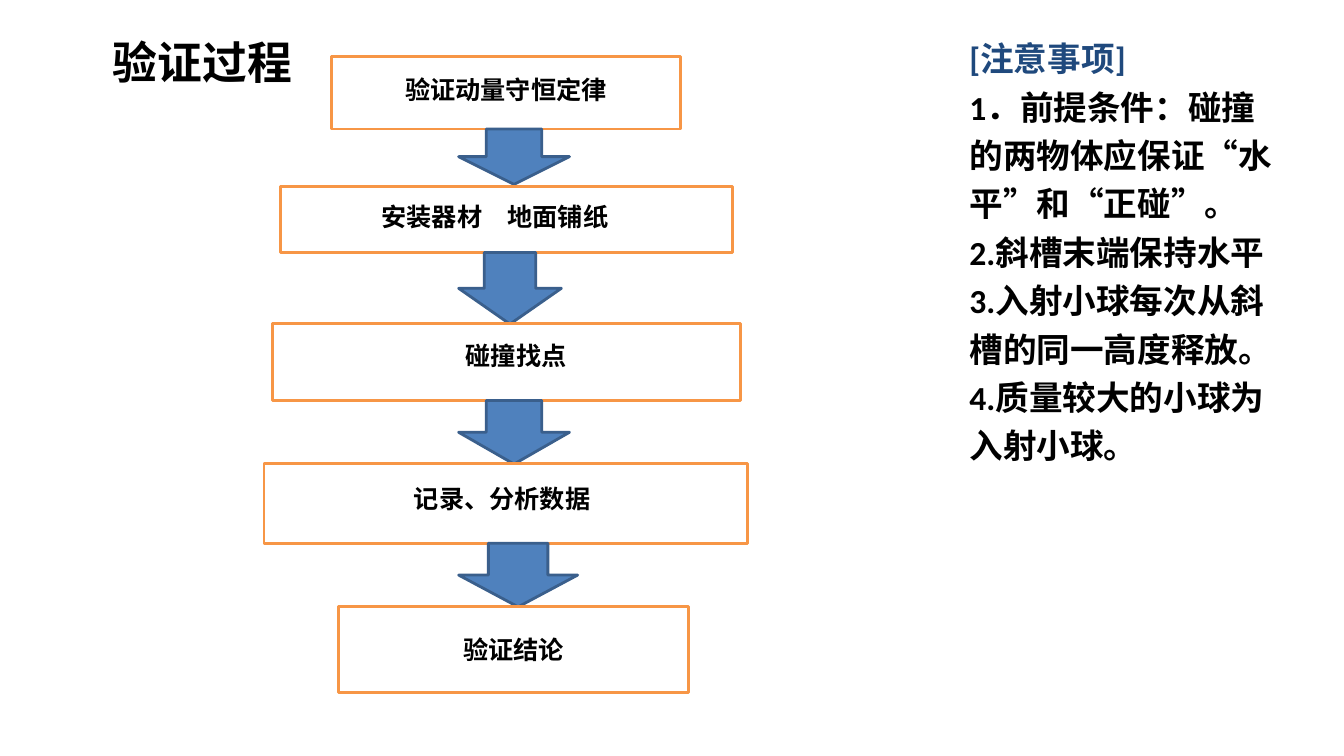
from dataclasses import dataclass

from pptx import Presentation
from pptx import util as u
from pptx.dml.color import RGBColor
from pptx.enum import shapes, text

BLACK = RGBColor(0x00, 0x00, 0x00)
WHITE = RGBColor(0xFF, 0xFF, 0xFF)
ORANGE = RGBColor(0xF7, 0x96, 0x46)
BLUE = RGBColor(0x4F, 0x81, 0xBD)
DARK_BLUE = RGBColor(0x3A, 0x5F, 0x8C)
NAVY = RGBColor(0x1F, 0x49, 0x7D)
ARROW_LEFT = 327.6
LABEL_HEIGHT = 28.8


@dataclass
class Box:
    left: float
    top: float
    width: float
    height: float


@dataclass
class Line:
    wording: str
    size: float
    font: str = "Calibri"
    color: RGBColor = BLACK
    spacing: float = 1.0


@dataclass
class Step:
    wording: str
    frame: Box
    label: Box
    arrow_width: float = 0
    arrow_height: float = 0


STEPS = [
    Step("验证动量守恒定律", Box(236.9, 40.3, 249.1, 51.8),
         Box(242.6, 49.7, 237.6, LABEL_HEIGHT), 79.2, 39.6),
    Step("安装器材　地面铺纸", Box(200.2, 133.2, 323.3, 47.2),
         Box(209.5, 140.4, 288, LABEL_HEIGHT), 73.4, 51.1),
    Step("碰撞找点", Box(194.4, 231.1, 334.8, 55),
         Box(211.7, 239.8, 313.9, LABEL_HEIGHT), 79.2, 45.4),
    Step("记录、分析数据", Box(188.6, 331.2, 345.6, 56.9),
         Box(226.1, 342, 265, LABEL_HEIGHT), 85, 45.4),
    Step("验证结论", Box(241.9, 433.4, 249.8, 61.2),
         Box(281.5, 449.3, 170.6, LABEL_HEIGHT)),
]

NOTES = [
    "1．前提条件：碰撞的两物体应保证“水平”和“正碰”。",
    "2.斜槽末端保持水平",
    "3.入射小球每次从斜槽的同一高度释放。",
    "4.质量较大的小球为入射小球。",
]


def points(box: Box) -> list[u.Length]:
    return [u.Pt(value) for value in (box.left, box.top, box.width, box.height)]


def add_block(slide, kind: shapes.MSO_SHAPE, box: Box,
              fill: RGBColor, outline: RGBColor) -> None:
    shape = slide.shapes.add_shape(kind, *points(box))
    shape.shadow.inherit = False
    shape.fill.solid()
    shape.fill.fore_color.rgb = fill
    shape.line.color.rgb = outline
    shape.line.width = u.Pt(2)


def add_text(slide, box: Box, lines: list[Line],
             alignment=text.PP_ALIGN.LEFT, anchor=text.MSO_ANCHOR.TOP,
             side_inset: float = 7.2, end_inset: float = 3.6) -> None:
    frame = slide.shapes.add_textbox(*points(box)).text_frame
    frame.word_wrap = True
    frame.vertical_anchor = anchor
    frame.margin_left = frame.margin_right = u.Pt(side_inset)
    frame.margin_top = frame.margin_bottom = u.Pt(end_inset)
    for index, line in enumerate(lines):
        paragraph = frame.add_paragraph() if index else frame.paragraphs[0]
        paragraph.alignment = alignment
        paragraph.line_spacing = line.spacing
        run = paragraph.add_run()
        run.text = line.wording
        run.font.name = line.font
        run.font.size = u.Pt(line.size)
        run.font.bold = True
        run.font.color.rgb = line.color


def main() -> None:
    presentation = Presentation()
    presentation.slide_width = u.Pt(960)
    presentation.slide_height = u.Pt(540)
    slide = presentation.slides.add_slide(presentation.slide_layouts[6])

    # Title
    add_text(slide, Box(72, 10.1, 815.8, 67.7), [Line("验证过程", 32, "Arial")],
             anchor=text.MSO_ANCHOR.MIDDLE, side_inset=8.64, end_inset=4.32)

    # Flow chart: each arrow hangs from the bottom of its step
    for step in STEPS:
        add_block(slide, shapes.MSO_SHAPE.FLOWCHART_PROCESS, step.frame, WHITE, ORANGE)
        if step.arrow_height:
            arrow = Box(ARROW_LEFT, step.frame.top + step.frame.height,
                        step.arrow_width, step.arrow_height)
            add_block(slide, shapes.MSO_SHAPE.DOWN_ARROW, arrow, BLUE, DARK_BLUE)

    # Step labels
    for step in STEPS:
        add_text(slide, step.label, [Line(step.wording, 18)], text.PP_ALIGN.CENTER)

    # Precautions
    heading = Line("[注意事项]", 24, color=NAVY)
    notes = [Line(note, 24, spacing=1.2) for note in NOTES]
    add_text(slide, Box(685.4, 23.8, 231.1, 349.9), [heading, *notes])

    presentation.save("out.pptx")


if __name__ == "__main__":
    main()
